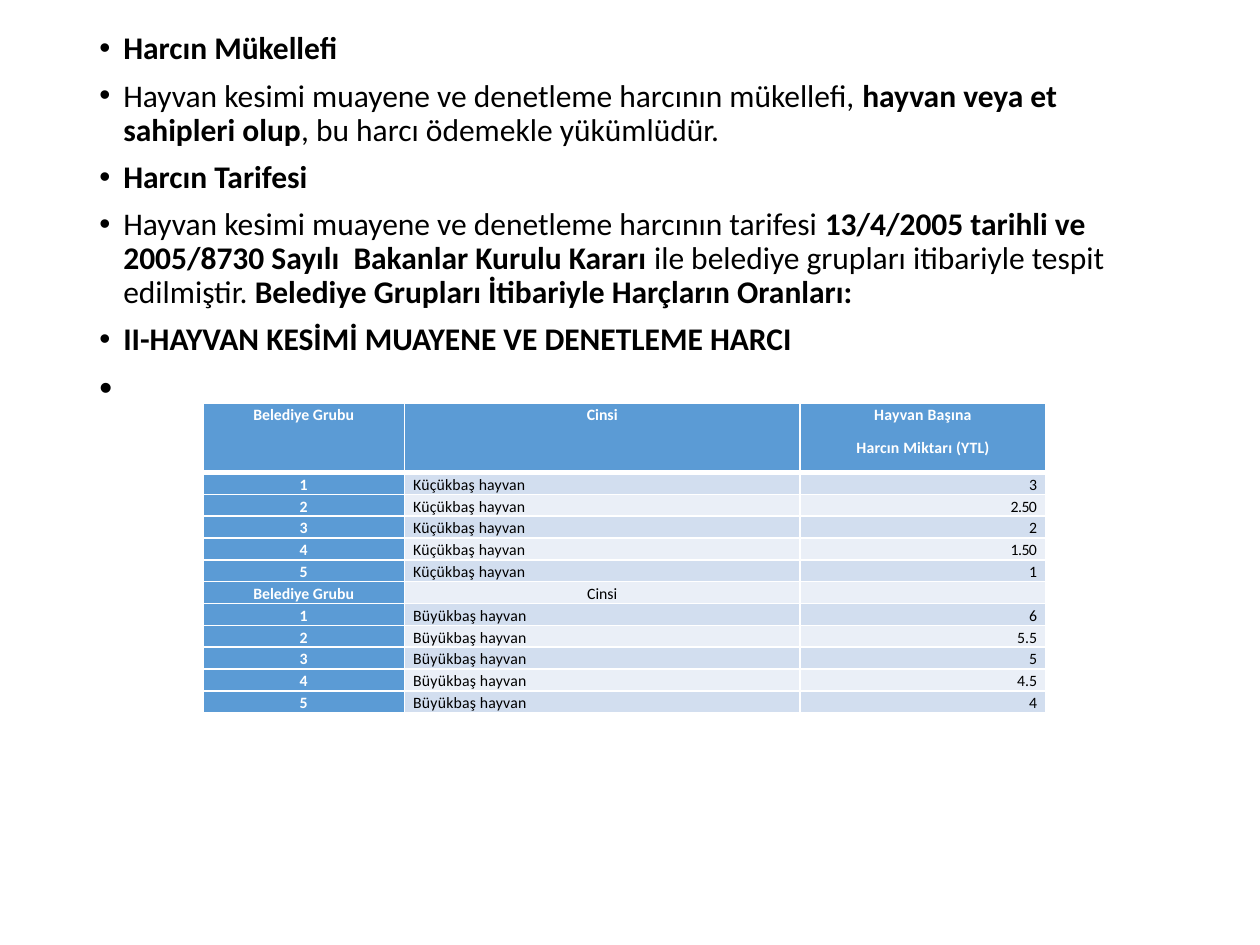
"""Build the slide on the animal slaughter inspection fee and its tariff table."""
from lxml.etree import SubElement
from pptx import Presentation
from pptx.dml.color import RGBColor
from pptx.enum.text import PP_ALIGN
from pptx.oxml.ns import qn
from pptx.util import Inches, Pt

BLACK = RGBColor(0x00, 0x00, 0x00)
WHITE = RGBColor(0xFF, 0xFF, 0xFF)
BLUE = RGBColor(0x5B, 0x9B, 0xD5)
BANDS = (RGBColor(0xEA, 0xEF, 0xF7), RGBColor(0xD2, 0xDE, 0xEF))
FONT = "Calibri"

BULLETS = [
    [("Harcın Mükellefi", True)],
    [("Hayvan kesimi muayene ve denetleme harcının mükellefi, ", False),
     ("hayvan veya et sahipleri olup", True),
     (", bu harcı ödemekle yükümlüdür.", False)],
    [("Harcın Tarifesi", True)],
    [("Hayvan kesimi muayene ve denetleme harcının tarifesi ", False),
     ("13/4/2005 tarihli ve 2005/8730 Sayılı  Bakanlar Kurulu Kararı ", True),
     ("ile belediye grupları itibariyle tespit edilmiştir. ", False),
     ("Belediye Grupları İtibariyle Harçların Oranları:", True)],
    [("II-HAYVAN KESİMİ MUAYENE VE DENETLEME HARCI", True)],
    [(" ", False)],
]
BULLET_SIZES = [18] * 5 + [21]

HEADER = ("Belediye Grubu", "Cinsi", "Hayvan Başına\nHarcın Miktarı (YTL)")
SUBHEADER = ("Belediye Grubu", "Cinsi", "")
SMALL_FEES = ("3", "2.50", "2", "1.50", "1")
LARGE_FEES = ("6", "5.5", "5", "4.5", "4")
TRACKING = {"Küçükbaş hayvan": 10, "Büyükbaş hayvan": 10, "Hayvan Başına": 10,
            "Harcın Miktarı (YTL)": 10, "2.50": -30, "1.50": -30}

COLUMN_WIDTHS = (1.6, 3.14, 1.95)
COLUMN_ALIGNS = (PP_ALIGN.CENTER, PP_ALIGN.LEFT, PP_ALIGN.RIGHT)
TABLE_HEIGHT, HEADER_HEIGHT = 2.45, 0.55


def fee_rows(animal, fees):
    return [(str(group), animal, fee) for group, fee in enumerate(fees, 1)]


def add_run(paragraph, text, size, color, bold):
    run = paragraph.add_run()
    run.text = text
    run.font.name = FONT
    run.font.size = Pt(size)
    run.font.bold = bold
    run.font.color.rgb = color
    return run


def add_bullets(slide):
    frame = slide.shapes.add_textbox(
        Inches(0.69), Inches(0.21), Inches(8.62), Inches(6.55)).text_frame
    frame.word_wrap = True
    for index, (pieces, size) in enumerate(zip(BULLETS, BULLET_SIZES)):
        paragraph = frame.add_paragraph() if index else frame.paragraphs[0]
        paragraph.line_spacing = 0.9
        paragraph.space_before = Pt(7.5)
        properties = paragraph._p.get_or_add_pPr()
        properties.set("marL", str(Inches(0.19)))
        properties.set("indent", str(Inches(-0.19)))
        SubElement(properties, qn("a:buFont"), typeface="Arial")
        SubElement(properties, qn("a:buChar"), char="•")
        for text, bold in pieces:
            add_run(paragraph, text, size, BLACK, bold)


def add_borders(cell, bottom_width):
    properties = cell._tc.get_or_add_tcPr()
    for side, width in (("L", 1), ("R", 1), ("T", 1), ("B", bottom_width)):
        line = SubElement(properties, qn(f"a:ln{side}"), w=str(Pt(width)))
        fill = SubElement(line, qn("a:solidFill"))
        SubElement(fill, qn("a:srgbClr"), val=str(WHITE))


def fill_cell(cell, text, align, fill, color, bold, bottom_width):
    cell.margin_left = cell.margin_right = Inches(0.07)
    cell.margin_top = cell.margin_bottom = 0
    add_borders(cell, bottom_width)
    cell.fill.solid()
    cell.fill.fore_color.rgb = fill
    for index, line in enumerate(text.split("\n")):
        frame = cell.text_frame
        paragraph = frame.add_paragraph() if index else frame.paragraphs[0]
        paragraph.alignment = align
        paragraph.line_spacing = 1.15
        paragraph.space_before = Pt(0 if align == PP_ALIGN.LEFT else 6)
        if line:
            run = add_run(paragraph, line, 9, color, bold)
            run.font._element.set("spc", str(TRACKING.get(line, 0)))
        else:
            SubElement(paragraph._p, qn("a:endParaRPr"), sz="900")


def add_tariff(slide):
    rows = [HEADER, *fee_rows("Küçükbaş hayvan", SMALL_FEES),
            SUBHEADER, *fee_rows("Büyükbaş hayvan", LARGE_FEES)]
    tariff = slide.shapes.add_table(
        len(rows), len(HEADER), Inches(1.61), Inches(3.2),
        Inches(sum(COLUMN_WIDTHS)), Inches(TABLE_HEIGHT)).table
    tariff.first_col = True
    for column, width in zip(tariff.columns, COLUMN_WIDTHS):
        column.width = Inches(width)
    fee_height = (TABLE_HEIGHT - HEADER_HEIGHT) / (len(rows) - 1)
    for r, row in enumerate(rows):
        tariff.rows[r].height = Inches(fee_height if r else HEADER_HEIGHT)
        for c, text in enumerate(row):
            heading = r == 0 or c == 0
            centred = row in (HEADER, SUBHEADER)
            fill_cell(tariff.cell(r, c), text,
                      PP_ALIGN.CENTER if centred else COLUMN_ALIGNS[c],
                      BLUE if heading else BANDS[r % 2],
                      WHITE if heading else BLACK, heading, 1 if r else 3)


def main():
    deck = Presentation()
    deck.slide_width, deck.slide_height = Inches(10), Inches(7.5)
    slide = deck.slides.add_slide(deck.slide_layouts[6])
    add_bullets(slide)
    add_tariff(slide)
    deck.save("out.pptx")


if __name__ == "__main__":
    main()
